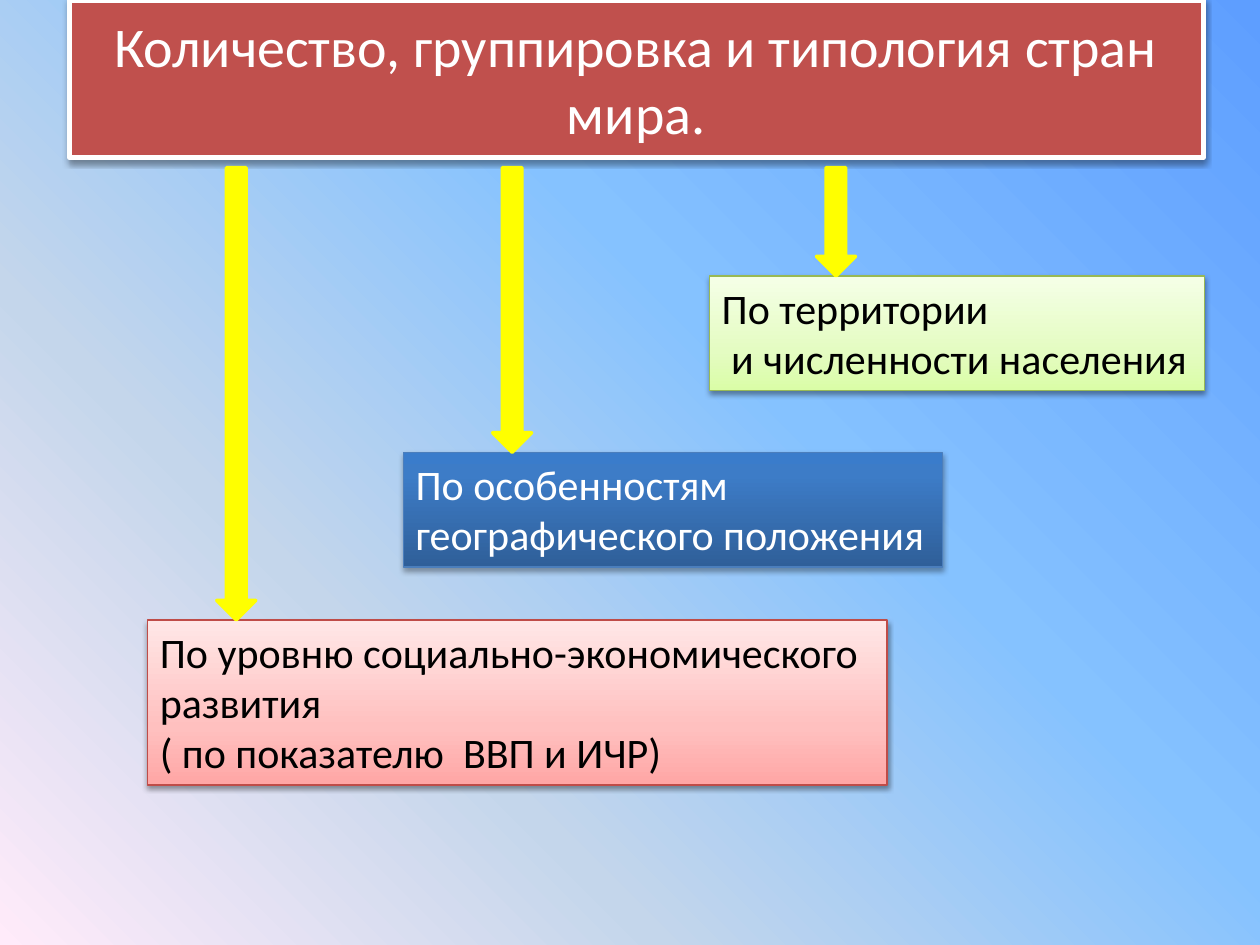
from lxml import etree
from pptx import Presentation
from pptx.dml.color import RGBColor
from pptx.enum.shapes import MSO_SHAPE
from pptx.enum.text import MSO_ANCHOR, MSO_AUTO_SIZE, PP_ALIGN
from pptx.oxml.ns import qn
from pptx.util import Inches, Pt

DOWN_ARROW = MSO_SHAPE.DOWN_ARROW
MIDDLE = MSO_ANCHOR.MIDDLE
CENTER, LEFT = PP_ALIGN.CENTER, PP_ALIGN.LEFT
FIT_SHAPE, NO_FIT = MSO_AUTO_SIZE.SHAPE_TO_FIT_TEXT, MSO_AUTO_SIZE.NONE

COLORS = {
    "white": "FFFFFF", "black": "000000", "title": "C0504D", "arrow": "FFFF00",
    "green_line": "98B955", "blue_line": "4B7EBC", "red_line": "BF4C48",
}
GRADIENTS = {
    "background": [(0, "5E9EFF"), (40, "85C2FF"), (70, "C4D6EB"), (100, "FFEBFA")],
    "green": [(0, "DAFDA7"), (35, "E4FCC2"), (100, "F5FFE7")],
    "blue": [(0, "2F5F99"), (80, "3D7CC7"), (100, "3A7CCB")],
    "red": [(0, "FFA6A5"), (35, "FFC0BF"), (100, "FFE7E7")],
}


class SlideBuilder:
    font = "Calibri"
    arrow_top = 1.33
    arrow_width = 0.31

    def __init__(self, slide):
        self.slide = slide

    def color(self, name):
        return RGBColor.from_string(COLORS[name])

    def add_color(self, parent, value):
        return etree.SubElement(parent, qn("a:srgbClr"), val=value)

    def gradient(self, fill, element, name, angle):
        fill.solid()
        solid = element.find(".//" + qn("a:solidFill"))
        gradient = etree.Element(qn("a:gradFill"), rotWithShape="1")
        stops = etree.SubElement(gradient, qn("a:gsLst"))
        for position, value in GRADIENTS[name]:
            stop = etree.SubElement(stops, qn("a:gs"), pos=str(position * 1000))
            self.add_color(stop, value)
        etree.SubElement(gradient, qn("a:lin"), ang=str(angle * 60000), scaled="0")
        solid.getparent().replace(solid, gradient)

    def background(self, name, angle):
        self.gradient(self.slide.background.fill, self.slide.element, name, angle)

    def outline(self, shape, color, width):
        shape.line.color.rgb = self.color(color)
        shape.line.width = Pt(width)

    def shadow(self, shape, opacity=38, distance=1.6):
        shape.shadow.inherit = False
        effects = shape.element.spPr.find(qn("a:effectLst"))
        outer = etree.SubElement(
            effects, qn("a:outerShdw"), blurRad=str(Pt(3.1)), dist=str(Pt(distance)),
            dir="5400000", rotWithShape="0")
        black = self.add_color(outer, COLORS["black"])
        etree.SubElement(black, qn("a:alpha"), val=str(opacity * 1000))

    def set_text(self, shape, lines, size, color, alignment):
        shape.text_frame.text = "\n".join(lines)
        for paragraph in shape.text_frame.paragraphs:
            paragraph.alignment = alignment
            for run in paragraph.runs:
                run.font.name = self.font
                run.font.size = Pt(size)
                run.font.color.rgb = self.color(color)

    def title(self, text, left, top, width, height):
        shape = self.slide.shapes.title
        shape.left, shape.top = Inches(left), Inches(top)
        shape.width, shape.height = Inches(width), Inches(height)
        shape.fill.solid()
        shape.fill.fore_color.rgb = self.color("title")
        self.outline(shape, "white", 3)
        self.shadow(shape)
        self.set_text(shape, [text], 32, "white", CENTER)
        shape.text_frame.word_wrap = True
        shape.text_frame.auto_size = NO_FIT
        shape.text_frame.vertical_anchor = MIDDLE

    def box(self, lines, left, top, width, height, theme, text_color, opacity, distance):
        shape = self.slide.shapes.add_textbox(
            Inches(left), Inches(top), Inches(width), Inches(height))
        self.gradient(shape.fill, shape.element, theme, 270)
        self.outline(shape, theme + "_line", 0.75)
        self.shadow(shape, opacity, distance)
        self.set_text(shape, lines, 24, text_color, LEFT)
        shape.text_frame.word_wrap = False
        shape.text_frame.auto_size = FIT_SHAPE

    def arrow(self, left, bottom):
        shape = self.slide.shapes.add_shape(
            DOWN_ARROW, Inches(left), Inches(self.arrow_top),
            Inches(self.arrow_width), Inches(bottom - self.arrow_top))
        shape.shadow.inherit = False
        shape.fill.solid()
        shape.fill.fore_color.rgb = self.color("arrow")
        self.outline(shape, "arrow", 2)


def main():
    presentation = Presentation()
    presentation.slide_width, presentation.slide_height = Inches(10), Inches(7.5)
    builder = SlideBuilder(presentation.slides.add_slide(presentation.slide_layouts[5]))
    builder.background("background", 135)
    builder.title("Количество, группировка и типология стран мира.", 0.55, 0, 9, 1.25)

    groups = [
        (["По территории", " и численности населения"],
         5.63, 2.19, 3.93, 0.91, "green", "black", 38, 1.6, 6.48),
        (["По особенностям", "географического положения"],
         3.2, 3.59, 4.28, 0.91, "blue", "white", 35, 1.8, 3.91),
        (["По уровню социально-экономического", "развития", "( по показателю  ВВП и ИЧР)"],
         1.17, 4.92, 5.87, 1.31, "red", "black", 38, 1.6, 1.72),
    ]
    for *box, arrow_left in groups:
        builder.box(*box)
    for _, _, box_top, *_, arrow_left in groups:
        builder.arrow(arrow_left, box_top)

    presentation.save("out.pptx")


if __name__ == "__main__":
    main()
